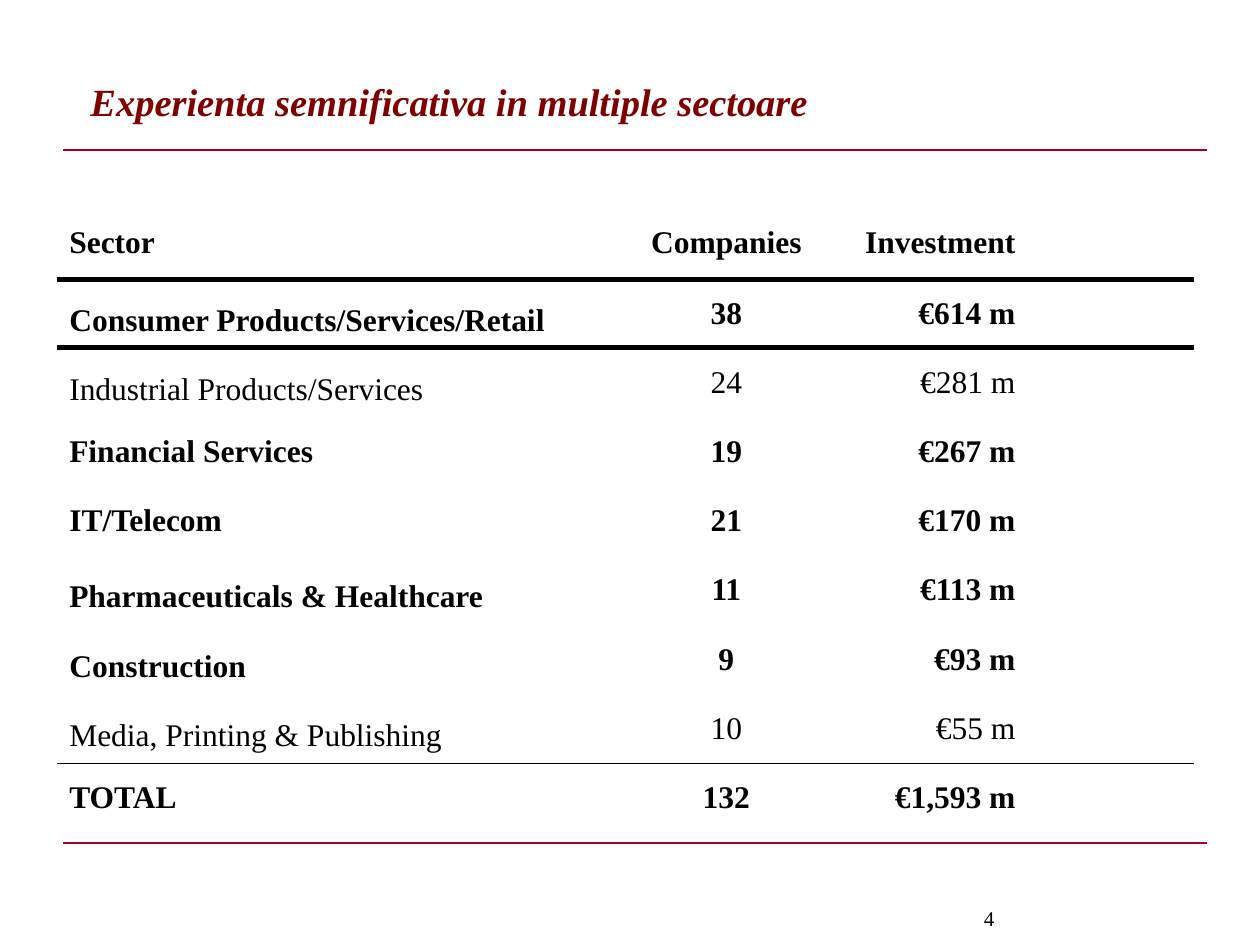
"""Build a slide with a table of companies and investment by sector."""
from lxml.etree import SubElement
from pptx import Presentation
from pptx.dml.color import RGBColor
from pptx.enum.shapes import MSO_CONNECTOR
from pptx.enum.text import MSO_ANCHOR, PP_ALIGN
from pptx.oxml import parse_xml
from pptx.oxml.ns import nsdecls, qn
from pptx.util import Inches, Pt


def color(value):
    """Turn a hex string into a colour."""
    return RGBColor.from_string(value)


def write(frame, text, size=18, fill="000000", bold=False, italic=False,
          align=PP_ALIGN.LEFT, before=0, spacing=1.0):
    """Put one formatted paragraph into a text frame."""
    frame.word_wrap = True
    paragraph = frame.paragraphs[0]
    paragraph.alignment = align
    paragraph.space_before = Pt(before)
    paragraph.line_spacing = spacing
    run = paragraph.add_run()
    run.text = text
    run.font.name = "Times New Roman"
    run.font.size = Pt(size)
    run.font.bold = bold
    run.font.italic = italic
    run.font.color.rgb = color(fill)


presentation = Presentation()
presentation.slide_width = Inches(10)
presentation.slide_height = Inches(7.5)
slide = presentation.slides.add_slide(presentation.slide_layouts[6])

for y in (1.19, 6.69):
    rule = slide.shapes.add_connector(
        MSO_CONNECTOR.STRAIGHT, Inches(0.5), Inches(y), Inches(9.58), Inches(y))
    rule.line.color.rgb = color("A50021")
    rule.line.width = Pt(1)
    SubElement(rule.element.spPr, qn("a:effectLst"))

number = slide.shapes.add_textbox(Inches(7.71), Inches(7.14), Inches(2.33), Inches(0.29))
write(number.text_frame, "4", size=12)

title = slide.shapes.add_textbox(Inches(0.62), Inches(0.55), Inches(9.1), Inches(0.51))
title.text_frame.vertical_anchor = MSO_ANCHOR.MIDDLE
write(title.text_frame, "Experienta semnificativa in multiple sectoare",
      size=22, fill="800000", bold=True, italic=True)

# text, companies, investment, bold, line spacing of the sector name
rows = [
    ("Sector", "Companies", "Investment", True, 1.0),
    ("Consumer Products/Services/Retail", "38", "€614 m", True, 1.4),
    ("Industrial Products/Services", "24", "€281 m", False, 1.4),
    ("Financial Services", "19", "€267 m", True, 1.0),
    ("IT/Telecom", "21", "€170 m", True, 1.0),
    ("Pharmaceuticals & Healthcare", "11", "€113 m", True, 1.4),
    ("Construction", "9", "€93 m", True, 1.4),
    ("Media, Printing & Publishing", "10", "€55 m", False, 1.4),
    ("TOTAL", "132", "€1,593 m", True, 1.0),
]
widths = [4.49, 1.65, 1.57, 1.32]
heights = [0.58, 0.54] + [0.55] * 7
aligns = [PP_ALIGN.LEFT, PP_ALIGN.CENTER, PP_ALIGN.RIGHT]
borders = {0: ("lnB", 3), 1: ("lnT", 3), 7: ("lnB", 1), 8: ("lnT", 1)}

frame = slide.shapes.add_table(
    len(rows), len(widths), Inches(0.45), Inches(1.64), Inches(9.03), Inches(4.97))
table = frame.table
table.first_row = False
table.horz_banding = False
for style in frame.element.iter(qn("a:tableStyleId")):
    style.text = "{2D5ABB26-0587-4C30-8999-92F81FD0307C}"
for column, width in zip(table.columns, widths):
    column.width = Inches(width)

for row_index, (*texts, bold, sector_spacing) in enumerate(rows):
    table.rows[row_index].height = Inches(heights[row_index])
    for column_index, (text, align) in enumerate(zip(texts, aligns)):
        cell = table.cell(row_index, column_index)
        cell.vertical_anchor = MSO_ANCHOR.MIDDLE
        write(cell.text_frame, text, bold=bold, align=align, before=3.6,
              spacing=sector_spacing if column_index == 0 else 1.0)
    for cell in table.rows[row_index].cells:
        cell.margin_left = cell.margin_right = Inches(0.1)
        cell.margin_top = cell.margin_bottom = Inches(0.05)
        cell.fill.background()
        if row_index in borders:
            side, points = borders[row_index]
            cell._tc.get_or_add_tcPr().insert(0, parse_xml(
                f'<a:{side} {nsdecls("a")} w="{Pt(points)}"><a:solidFill>'
                f'<a:srgbClr val="000000"/></a:solidFill></a:{side}>'))

presentation.save("out.pptx")
